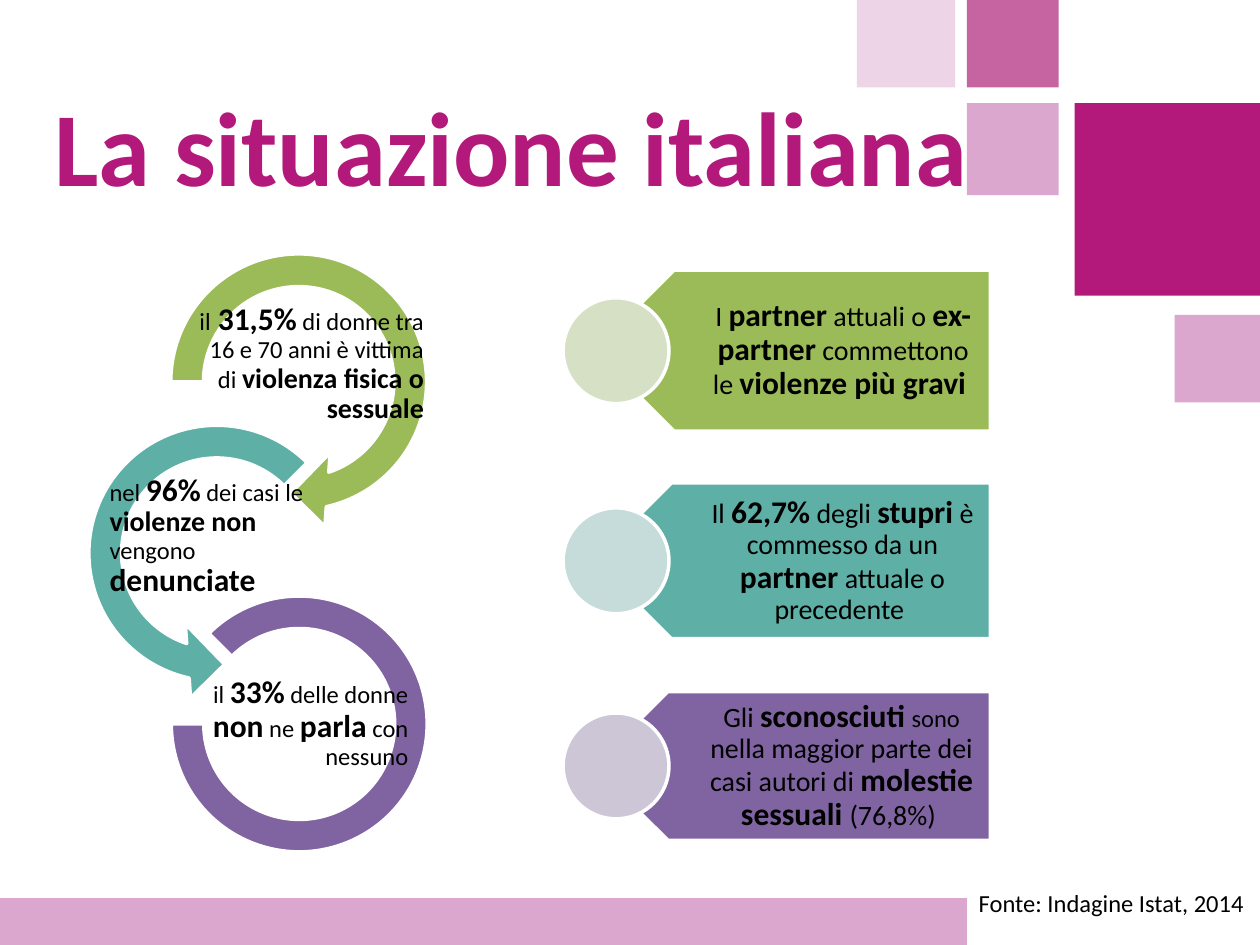
from pptx import Presentation
from pptx.dml.color import RGBColor
from pptx.enum.shapes import MSO_SHAPE as SHAPE
from pptx.enum.text import MSO_ANCHOR as ANCHOR, MSO_AUTO_SIZE as AUTO, PP_ALIGN as ALIGN
from pptx.util import Pt

COLORS = {
    "magenta": "B2197A", "rose": "C664A2", "pink": "DCA7CE", "blush": "EDD5E7",
    "green": "9BBB59", "teal": "5EAFA6", "purple": "8064A2",
    "pale green": "D5E0C4", "pale teal": "C5DCDA", "pale purple": "CDC6D7",
    "white": "FFFFFF", "black": "000000",
}


def draw(shapes, kind, box, color, outlined=False):
    shape = shapes.add_shape(kind, *map(Pt, box))
    shape.shadow.inherit = False
    shape.fill.solid()
    shape.fill.fore_color.rgb = RGBColor.from_string(COLORS[color])
    if outlined:
        shape.line.color.rgb = RGBColor.from_string(COLORS["white"])
        shape.line.width = Pt(2)
    else:
        shape.line.fill.background()
    return shape


def write(holder, runs, frame_format, align=ALIGN.LEFT, spacing=1.0, color="black"):
    frame = holder.text_frame
    for name, value in frame_format.items():
        setattr(frame, name, value)
    paragraph = frame.paragraphs[0]
    paragraph.alignment = align
    paragraph.line_spacing = spacing
    for words, size, bold in runs:
        run = paragraph.add_run()
        run.text = words
        for name, value in {"name": "Calibri", "size": Pt(size), "bold": bold}.items():
            setattr(run.font, name, value)
        run.font.color.rgb = RGBColor.from_string(COLORS[color])


prs = Presentation()
prs.slide_width, prs.slide_height = Pt(720), Pt(540)
slide = prs.slides.add_slide(prs.slide_layouts[5])

one_line = {"word_wrap": False, "auto_size": AUTO.SHAPE_TO_FIT_TEXT, "vertical_anchor": ANCHOR.TOP}
arc_text = {"word_wrap": True, "vertical_anchor": ANCHOR.MIDDLE, "margin_left": Pt(0.7),
            "margin_right": Pt(0.7), "margin_top": Pt(0.7), "margin_bottom": Pt(0.7)}
plate_text = {"word_wrap": True, "vertical_anchor": ANCHOR.MIDDLE, "margin_left": Pt(44),
              "margin_right": Pt(8.4), "margin_top": Pt(5), "margin_bottom": Pt(5)}

title = slide.shapes.title
title.left, title.top, title.width, title.height = map(Pt, (23.8, 43.2, 542.2, 80))
write(title, [("La situazione italiana", 60, True)], one_line, color="magenta")

decorations = [
    ((489.6, 0, 56.2, 50), "blush"),
    ((552.5, 0, 52.5, 50), "rose"),
    ((552.5, 59, 52.5, 52.5), "pink"),
    ((614, 59, 106, 110), "magenta"),
    ((671.2, 180, 48.8, 50), "pink"),
    ((0, 513.3, 552.5, 26.7), "pink"),
]
for box, color in decorations:
    draw(slide.shapes, SHAPE.RECTANGLE, box, color)

arcs = [
    (SHAPE.CIRCULAR_ARROW, (85.7, 133.2, 170, 170), (0.11, 11.42, 45, 108, 0.125), "green",
     (113, 162.7, 130, 90.7), ALIGN.RIGHT,
     [("il", 14, False), (" ", 18, False), ("31,5%", 18, True),
      (" di donne tra 16 e 70 anni è vittima di ", 14, False),
      ("violenza fisica o sessuale", 16, True)]),
    (SHAPE.LEFT_CIRCULAR_ARROW, (38.9, 231.1, 170, 170), (0.11, 11.42, 63, 189, 0.125), "teal",
     (61.9, 262.1, 116.6, 88.6), ALIGN.LEFT,
     [("nel ", 14, False), ("96%", 18, True), (" dei casi le ", 14, False),
      ("violenze non ", 16, True), ("vengono ", 14, False), ("denunciate", 18, True)]),
    (SHAPE.BLOCK_ARC, (97.9, 340.6, 146.2, 146.2), (135, 108, 0.127), "purple",
     (118.1, 375.1, 116, 77), ALIGN.RIGHT,
     [("il ", 14, False), ("33%", 18, True), (" delle donne ", 14, False), ("non", 18, True),
      (" ne ", 14, False), ("parla", 18, True), (" con nessuno", 14, False)]),
]
arc_group = slide.shapes.add_group_shape().shapes
for kind, box, adjustments, color, text_box, align, runs in arcs:
    arc = draw(arc_group, kind, box, color, outlined=True)
    for index, value in enumerate(adjustments):
        arc.adjustments[index] = value
    write(arc_group.add_textbox(*map(Pt, text_box)), runs, arc_text, align, 0.9)

source = slide.shapes.add_textbox(Pt(552.2), Pt(504), Pt(167.8), Pt(24.2))
write(source, [("Fonte: Indagine Istat, 2014", 14, False)], one_line)

plates = [
    (154.4, 92, "green",
     [("I ", 16, False), ("partner", 18, True), (" attuali o ", 16, False),
      ("ex-partner", 18, True), (" commettono le ", 16, False),
      ("violenze più gravi ", 18, True)]),
    (276, 89, "teal",
     [("Il ", 16, False), ("62,7%", 18, True), (" degli ", 16, False), ("stupri", 18, True),
      (" è commesso da un ", 16, False), ("partner", 18, True),
      (" attuale o precedente ", 16, False)]),
    (395.2, 85, "purple",
     [("Gli ", 16, False), ("sconosciuti", 18, True), (" ", 16, False), ("sono", 14, False),
      (" nella maggior parte dei casi autori di ", 16, False),
      ("molestie sessuali ", 18, True), ("(76,8%) ", 16, False)]),
]
plate_left, plate_width, dot_left, dot_size = 339.1, 226.8, 321.8, 60.5
plate_group = slide.shapes.add_group_shape().shapes
for top, height, color, runs in plates:
    plate = draw(plate_group, SHAPE.PENTAGON, (plate_left, top, plate_width, height), color, outlined=True)
    plate.rotation = 180
    tip = height / 4
    text_box = (plate_left + tip, top, plate_width - tip, height)
    write(plate_group.add_textbox(*map(Pt, text_box)), runs, plate_text, ALIGN.CENTER, 0.9)
    dot_top = top + (height - dot_size) / 2
    draw(plate_group, SHAPE.OVAL, (dot_left, dot_top, dot_size, dot_size), f"pale {color}", outlined=True)

prs.save("out.pptx")
